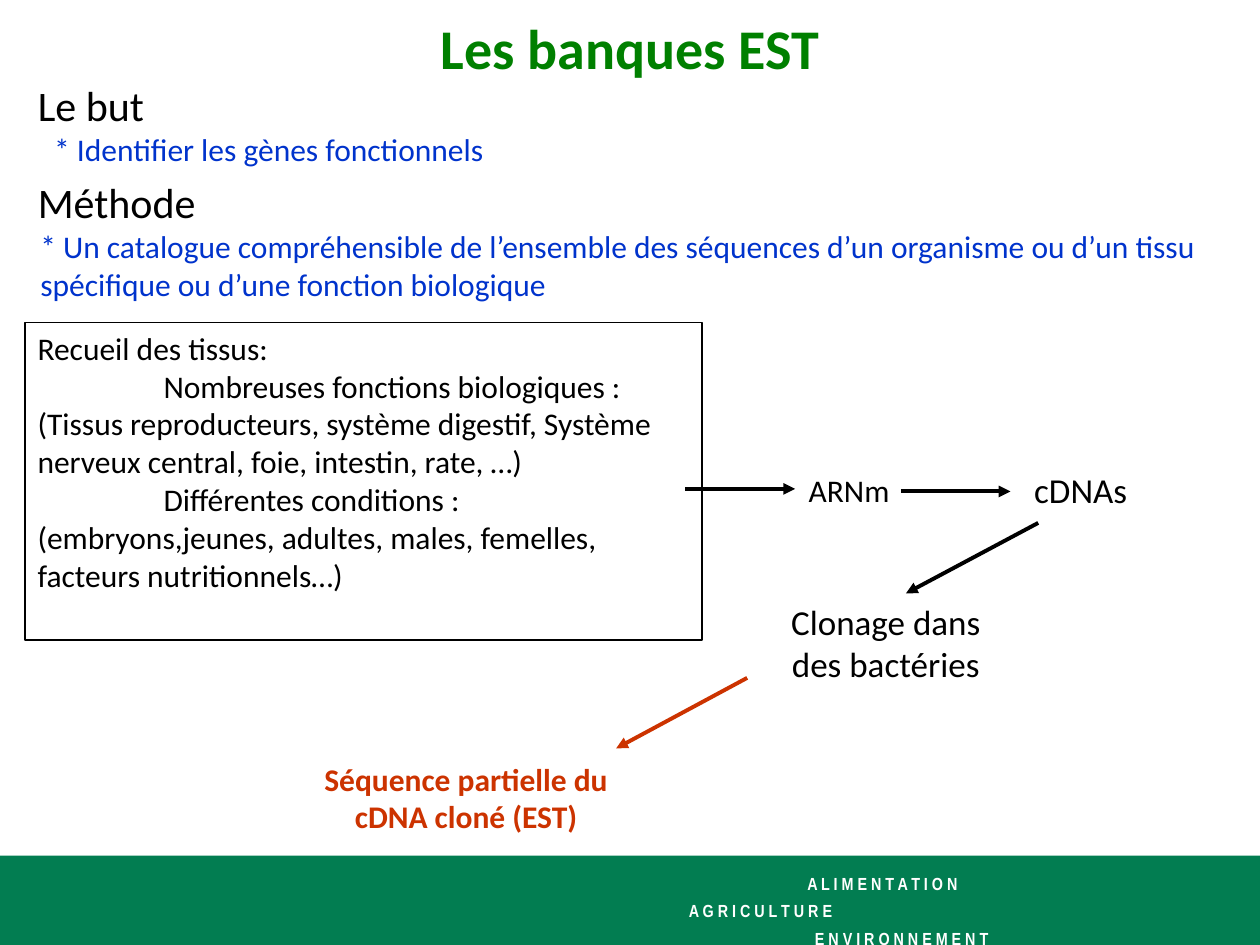
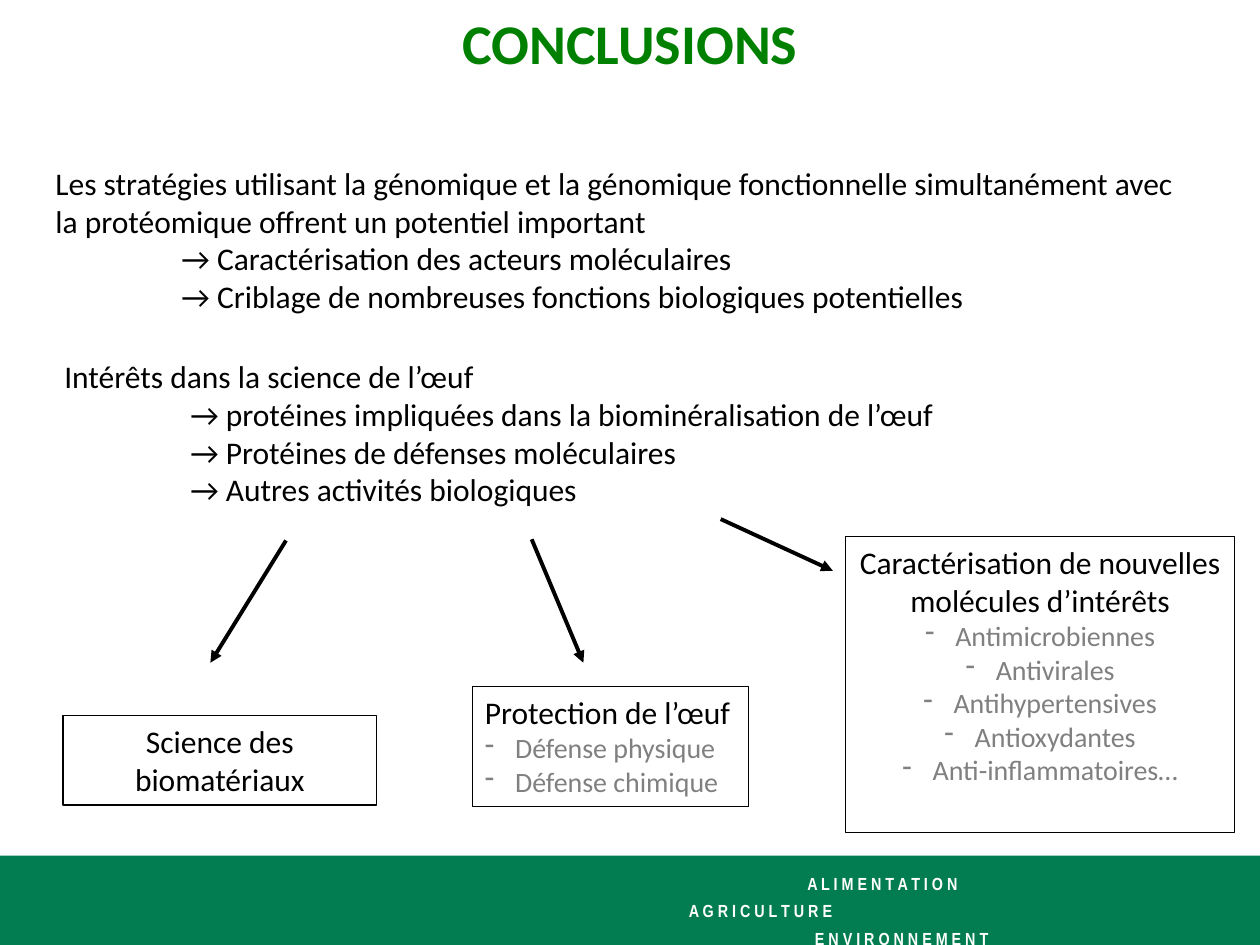
import dataclasses

import lxml.etree
import pptx
import pptx.dml.color
import pptx.enum.shapes
import pptx.enum.text
import pptx.oxml.ns
import pptx.util

Inches = pptx.util.Inches
Pt = pptx.util.Pt
Align = pptx.enum.text.PP_ALIGN
Rect = pptx.enum.shapes.MSO_SHAPE.RECTANGLE


@dataclasses.dataclass(frozen=True)
class Theme:
    font: str = "Calibri"
    narrow: str = "Arial Narrow"
    black: str = "000000"
    white: str = "FFFFFF"
    blue: str = "0033CC"
    red: str = "CC3300"
    grey: str = "808080"
    green: str = "008000"
    band: str = "027D51"
    title: int = 32
    head: int = 24
    step: int = 20
    text: int = 18
    item: int = 16
    foot: int = 10


THEME = Theme()


def color(code):
    return pptx.dml.color.RGBColor.from_string(code)


def tag(parent, name, **attrs):
    return lxml.etree.SubElement(parent, pptx.oxml.ns.qn(name), **attrs)


def write(frame, text, size=THEME.text, ink=THEME.black, font=THEME.font, bold=False,
          align=Align.LEFT, left=0, first=0, dash=False, before=0, line=None):
    para = frame.paragraphs[0]
    if para.runs:
        para = frame.add_paragraph()
    para.text = text
    props = para._p.get_or_add_pPr()
    props.set("marL", str(Inches(left)))
    props.set("indent", str(Inches(first)))
    if dash:
        tag(props, "a:buChar", char="-")
    else:
        tag(props, "a:buNone")
    para.alignment = align
    para.space_before = Pt(before)
    if line:
        para.line_spacing = line
    for run in para.runs:
        run.font.name = font
        run.font.size = Pt(size)
        run.font.bold = bold
        run.font.color.rgb = color(ink)


def place(shape, left, top, width, height):
    shape.left, shape.top = Inches(left), Inches(top)
    shape.width, shape.height = Inches(width), Inches(height)
    return setup(shape.text_frame)


def setup(frame, wrap=True):
    frame.word_wrap = wrap
    frame.auto_size = pptx.enum.text.MSO_AUTO_SIZE.NONE
    frame.vertical_anchor = pptx.enum.text.MSO_ANCHOR.TOP
    return frame


def add_title(slide, text, top):
    frame = place(slide.shapes.title, 0, top, 10, 0.63)
    write(frame, text, size=THEME.title, ink=THEME.green, bold=True, align=Align.CENTER)


def add_label(slide, text, area, wrap=True, **style):
    label = slide.shapes.add_textbox(*map(Inches, area))
    write(setup(label.text_frame, wrap), text, **style)


def add_box(slide, area, weight=0.75):
    box = slide.shapes.add_shape(Rect, *map(Inches, area))
    box.shadow.inherit = False
    box.fill.background()
    box.line.color.rgb = color(THEME.black)
    box.line.width = Pt(weight)
    return setup(box.text_frame)


def add_items(frame, items, align=Align.LEFT):
    for item in items:
        write(frame, item, size=THEME.item, ink=THEME.grey, align=align,
              left=0.24, first=-0.24, dash=True)


def add_arrow(slide, start, end, ink=THEME.black):
    kind = pptx.enum.shapes.MSO_CONNECTOR.STRAIGHT
    arrow = slide.shapes.add_connector(kind, *map(Inches, start + end))
    arrow.line.color.rgb = color(ink)
    arrow.line.width = Pt(2.25)
    props = arrow.element.spPr
    tag(props.get_or_add_ln(), "a:tailEnd", type="triangle")
    tag(props, "a:effectLst")


def add_footer(slide):
    band = slide.shapes.add_shape(Rect, *map(Inches, (0, 6.79, 10, 0.71)))
    band.shadow.inherit = False
    band.fill.solid()
    band.fill.fore_color.rgb = color(THEME.band)
    band.line.fill.background()
    motto = slide.shapes.add_textbox(*map(Inches, (5.31, 6.83, 3.42, 0.67)))
    frame = setup(motto.text_frame)
    words = (("A L I M E N T A T I O N", 1), ("A G R I C U L T U R E", 0.06),
             ("E N V I R O N N E M E N T", 1.06))
    for word, left in words:
        write(frame, word, size=THEME.foot, ink=THEME.white, font=THEME.narrow,
              bold=True, left=left, line=1.3)
    tree = slide.slide_layout.shapes.element
    for shape in (band, motto):
        tree.append(shape.element)


def build_banks(slide):
    add_title(slide, "Les banques EST", 0.06)
    body = place(slide.placeholders[1], 0.2, 0.58, 9.51, 1.9)
    write(body, "Le but", size=THEME.head)
    write(body, "* Identifier les gènes fonctionnels", ink=THEME.blue, left=0.13)
    write(body, "Méthode", size=THEME.head, before=5)
    write(body, "* Un catalogue compréhensible de l’ensemble des séquences d’un organisme "
          "ou d’un tissu spécifique ou d’une fonction biologique", ink=THEME.blue, left=0.02)

    tissue = add_box(slide, (0.2, 2.56, 5.37, 2.52), weight=1)
    write(tissue, "Recueil des tissus:")
    write(tissue, "Nombreuses fonctions biologiques : (Tissus reproducteurs, système digestif, "
          "Système nerveux central, foie, intestin, rate, …)", first=1)
    write(tissue, "Différentes conditions :\v(embryons,jeunes, adultes, males, femelles, "
          "facteurs nutritionnels…)", first=1)

    add_label(slide, "ARNm", (6.32, 3.69, 0.84, 0.4), wrap=False)
    add_label(slide, "cDNAs", (8.11, 3.67, 0.94, 0.43), wrap=False, size=THEME.step)
    add_label(slide, "Clonage dans des bactéries", (6.14, 4.72, 1.78, 0.77),
              size=THEME.step, align=Align.CENTER)
    add_label(slide, "Séquence partielle du cDNA cloné (EST)", (2.36, 5.98, 2.68, 0.7),
              ink=THEME.red, bold=True, align=Align.CENTER)
    add_arrow(slide, (5.44, 3.88), (6.31, 3.88))
    add_arrow(slide, (7.15, 3.9), (8.02, 3.9))
    add_arrow(slide, (8.24, 4.15), (7.19, 4.71))
    add_arrow(slide, (5.93, 5.38), (4.89, 5.94), THEME.red)


def build_close(slide):
    add_title(slide, "CONCLUSIONS", 0.02)
    body = place(slide.placeholders[1], 0.34, 1.25, 9.18, 2.84)
    write(body, "Les stratégies utilisant la génomique et la génomique fonctionnelle "
          "simultanément avec la protéomique offrent un potentiel important")
    for gain in ("Caractérisation des acteurs moléculaires",
                 "Criblage de nombreuses fonctions biologiques potentielles"):
        write(body, f"→ {gain}", left=1)
    write(body, "Intérêts dans la science de l’œuf", left=0.07, before=24)
    for use in ("protéines impliquées dans la biominéralisation de l’œuf",
                "Protéines de défenses moléculaires", "Autres activités biologiques"):
        write(body, f"→ {use}", left=1.07)

    write(add_box(slide, (0.5, 5.68, 2.49, 0.71)), "Science des biomatériaux",
          align=Align.CENTER)
    guard = add_box(slide, (3.75, 5.45, 2.19, 0.95))
    write(guard, "Protection de l’œuf")
    add_items(guard, ("Défense physique", "Défense chimique"))
    novel = add_box(slide, (6.71, 4.26, 3.09, 2.35))
    write(novel, "Caractérisation de nouvelles molécules d’intérêts", align=Align.CENTER)
    add_items(novel, ("Antimicrobiennes", "Antivirales", "Antihypertensives",
                      "Antioxydantes", "Anti-inflammatoires…"), Align.CENTER)
    add_arrow(slide, (2.27, 4.29), (1.67, 5.26))
    add_arrow(slide, (4.22, 4.28), (4.63, 5.26))
    add_arrow(slide, (5.72, 4.12), (6.61, 4.53))


def main():
    deck = pptx.Presentation()
    deck.slide_width, deck.slide_height = Inches(10), Inches(7.5)
    layout = deck.slide_layouts[1]
    banks, close = (deck.slides.add_slide(layout) for _ in range(2))
    add_footer(banks)
    build_banks(banks)
    build_close(close)
    deck.save("out.pptx")


if __name__ == "__main__":
    main()
